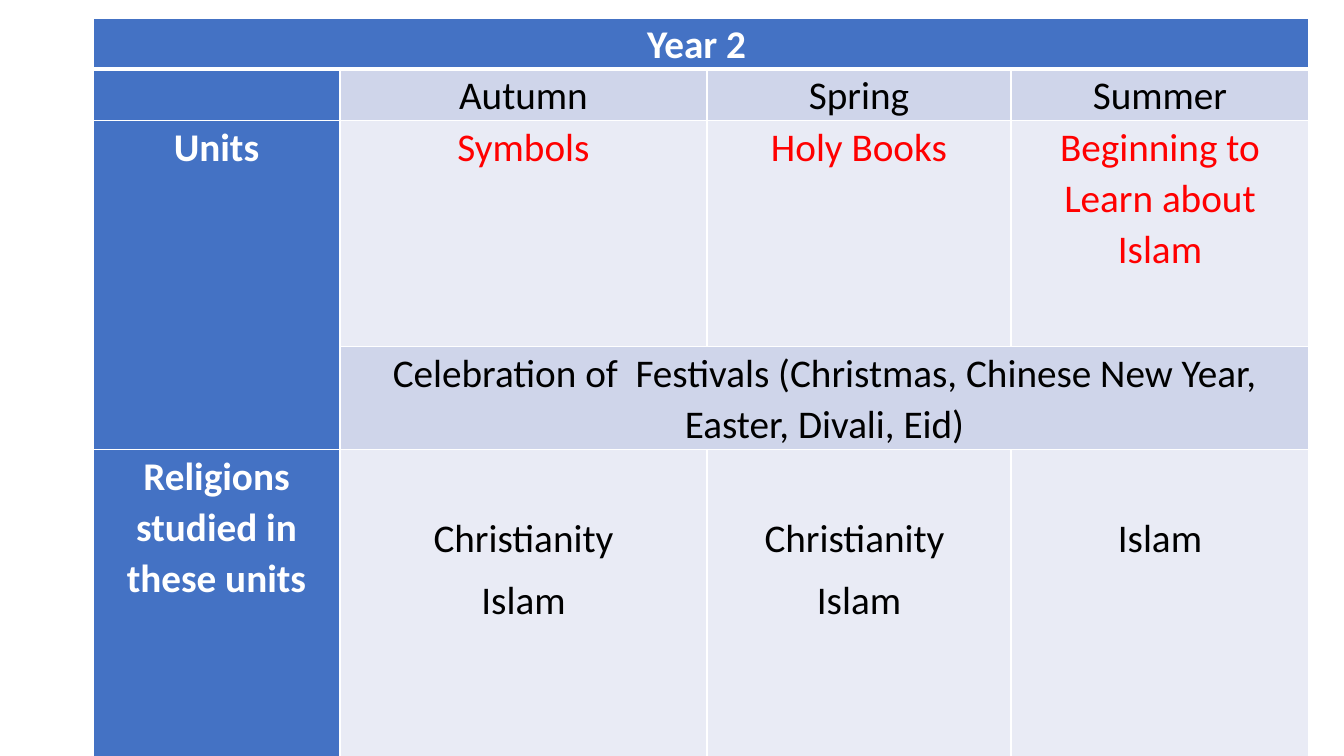
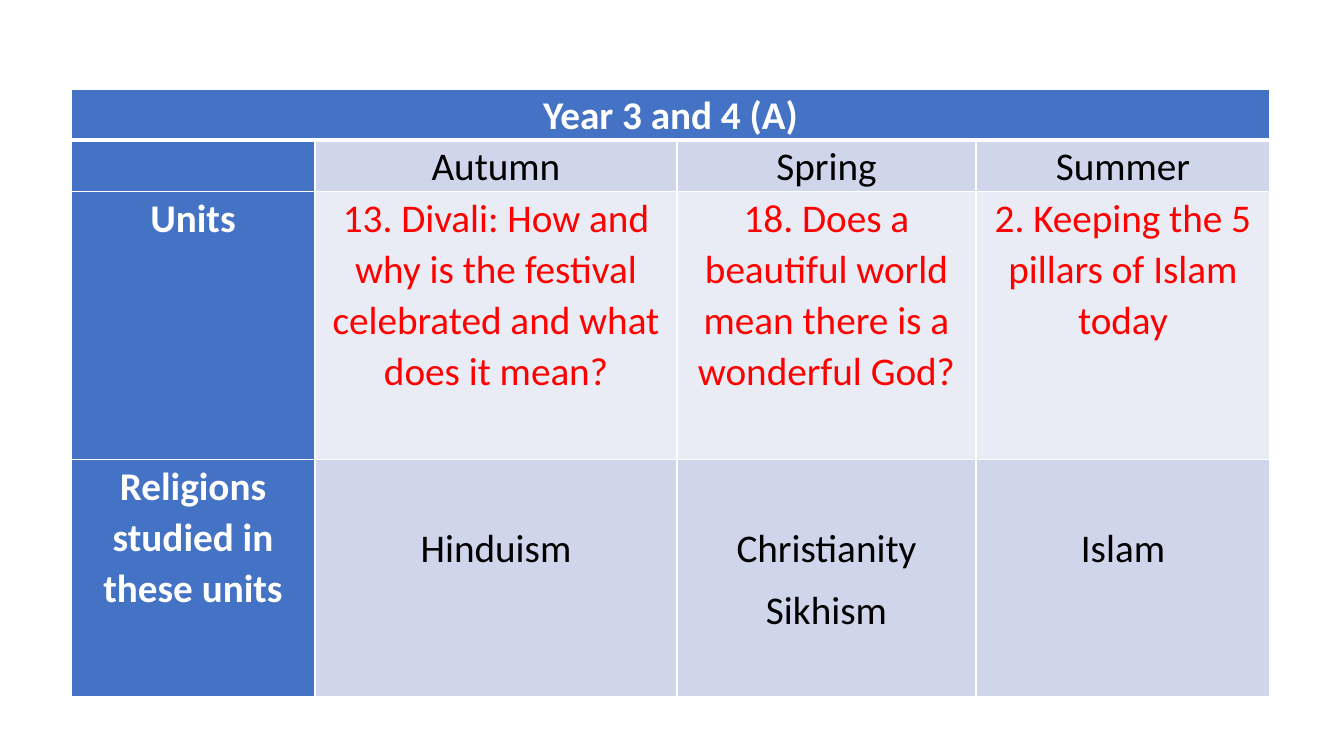
from pptx import Presentation
from pptx.dml.color import RGBColor
from pptx.enum.text import PP_ALIGN
from pptx.oxml.xmlchemy import OxmlElement
from pptx.util import Emu, Pt

SCALE = 914400 / 100.8  # EMU in one px
WHITE = RGBColor(0xFF, 0xFF, 0xFF)
BLACK = RGBColor(0, 0, 0)
RED = RGBColor(0xFF, 0, 0)
BLUE = RGBColor(0x44, 0x72, 0xC4)
BANDS = RGBColor(0xE9, 0xEB, 0xF5), RGBColor(0xCF, 0xD5, 0xEA)
FONT, SIZE = "Calibri", 28
INSET, DROP = 7, 62  # side inset; lowered text of the religion row

# Rows: height, label (None joins the label above), entries, colour, top inset
# A single entry spans all the terms
TERMS = (51, "", ["Autumn", "Spring", "Summer"], BLACK, 0)
STUDIED = "Religions studied in these units"

YEAR_2 = [
    TERMS,
    (226, "Units", ["Symbols", "Holy Books", "Beginning to Learn about Islam"], RED, 0),
    (103, None, ["Celebration of  Festivals (Christmas, Chinese New Year, "
                 "Easter, Divali, Eid)"], BLACK, 0),
    (307, STUDIED, ["Christianity\nIslam", "Christianity \nIslam", "Islam"], BLACK, DROP),
]
YEAR_3 = [
    TERMS,
    (268, "Units", ["13. Divali: How and why is the festival celebrated and what does it mean?",
                    "18. Does a beautiful world mean there is a wonderful God?",
                    "2. Keeping the 5 pillars of Islam today"], RED, 0),
    (237, STUDIED, ["Hinduism", "Christianity\nSikhism", "Islam"], BLACK, DROP),
]


def px(n):
    return Emu(round(n * SCALE))


def paint(cell, fill, top=1, base=1):
    """Fill a cell and rule its four edges in white."""
    props = cell._tc.get_or_add_tcPr()
    for tag, width in (("a:lnL", 1), ("a:lnR", 1), ("a:lnT", top), ("a:lnB", base)):
        edge = OxmlElement(tag)
        edge.set("w", str(Pt(width)))
        solid = OxmlElement("a:solidFill")
        tint = OxmlElement("a:srgbClr")
        tint.set("val", str(WHITE))
        solid.append(tint)
        edge.append(solid)
        props.append(edge)
    cell.fill.solid()
    cell.fill.fore_color.rgb = fill


def write(cell, text, color, bold=False, top=0):
    """Set centred text in a cell."""
    cell.margin_left = cell.margin_right = px(INSET)
    cell.margin_top, cell.margin_bottom = px(top), 0
    cell.text_frame.text = text
    for para in cell.text_frame.paragraphs:
        para.alignment = PP_ALIGN.CENTER
        para.line_spacing = 1.07
        para.space_after = Pt(8)
        for run in para.runs:
            font = run.font
            font.name, font.size, font.bold = FONT, Pt(SIZE), bold
            font.color.rgb = color


def year_plan(deck, title, left, top, widths, rows):
    """Add a slide with the plan of one school year."""
    slide = deck.slides.add_slide(deck.slide_layouts[6])
    heights = [51] + [row[0] for row in rows]
    table = slide.shapes.add_table(
        len(heights), len(widths), px(left), px(top),
        px(sum(widths)), px(sum(heights))).table
    for col, width in zip(table.columns, widths):
        col.width = px(width)
    for row, height in zip(table.rows, heights):
        row.height = px(height)

    # Heading band
    last = len(widths) - 1
    for col in range(len(widths)):
        paint(table.cell(0, col), BLUE, base=3)
    table.cell(0, 0).merge(table.cell(0, last))
    write(table.cell(0, 0), title, WHITE, True)

    # Labels and entries
    for at, (_, label, entries, color, drop) in enumerate(rows, 1):
        for col in range(len(widths)):
            paint(table.cell(at, col), BANDS[at % 2] if col else BLUE,
                  top=3 if at == 1 else 1)
        if label is None:
            table.cell(at - 1, 0).merge(table.cell(at, 0))
        else:
            write(table.cell(at, 0), label, WHITE, True)
        if len(entries) == 1:
            table.cell(at, 1).merge(table.cell(at, last))
        for col, entry in enumerate(entries, 1):
            write(table.cell(at, col), entry, color, top=drop)


def main():
    deck = Presentation()
    deck.slide_width, deck.slide_height = px(1344), px(756)
    year_plan(deck, "Year 2 ", 93, 18, [247, 367, 304, 298], YEAR_2)
    year_plan(deck, "Year 3 and 4 (A)", 71, 89, [244, 362, 299, 294], YEAR_3)
    deck.save("out.pptx")


if __name__ == "__main__":
    main()
